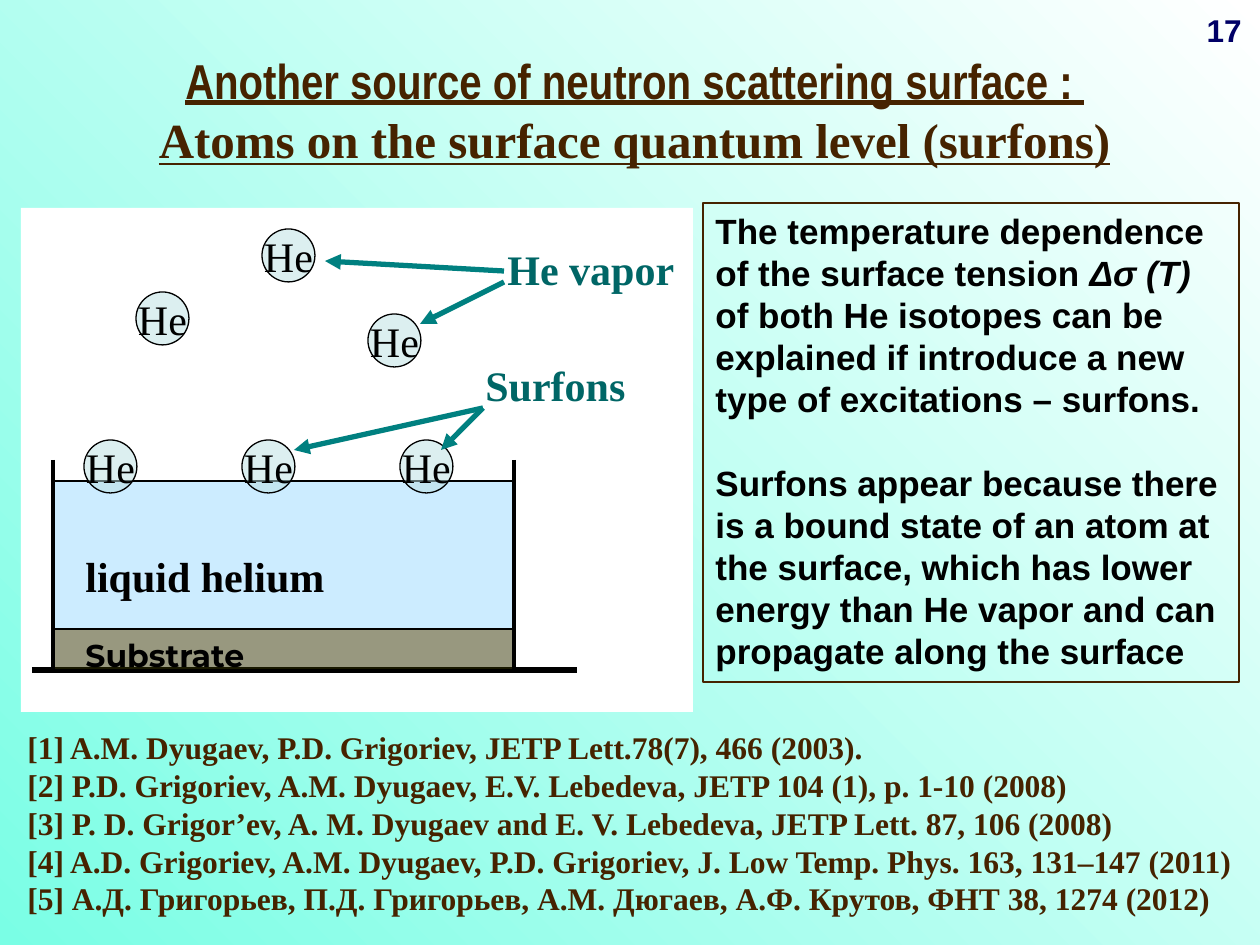
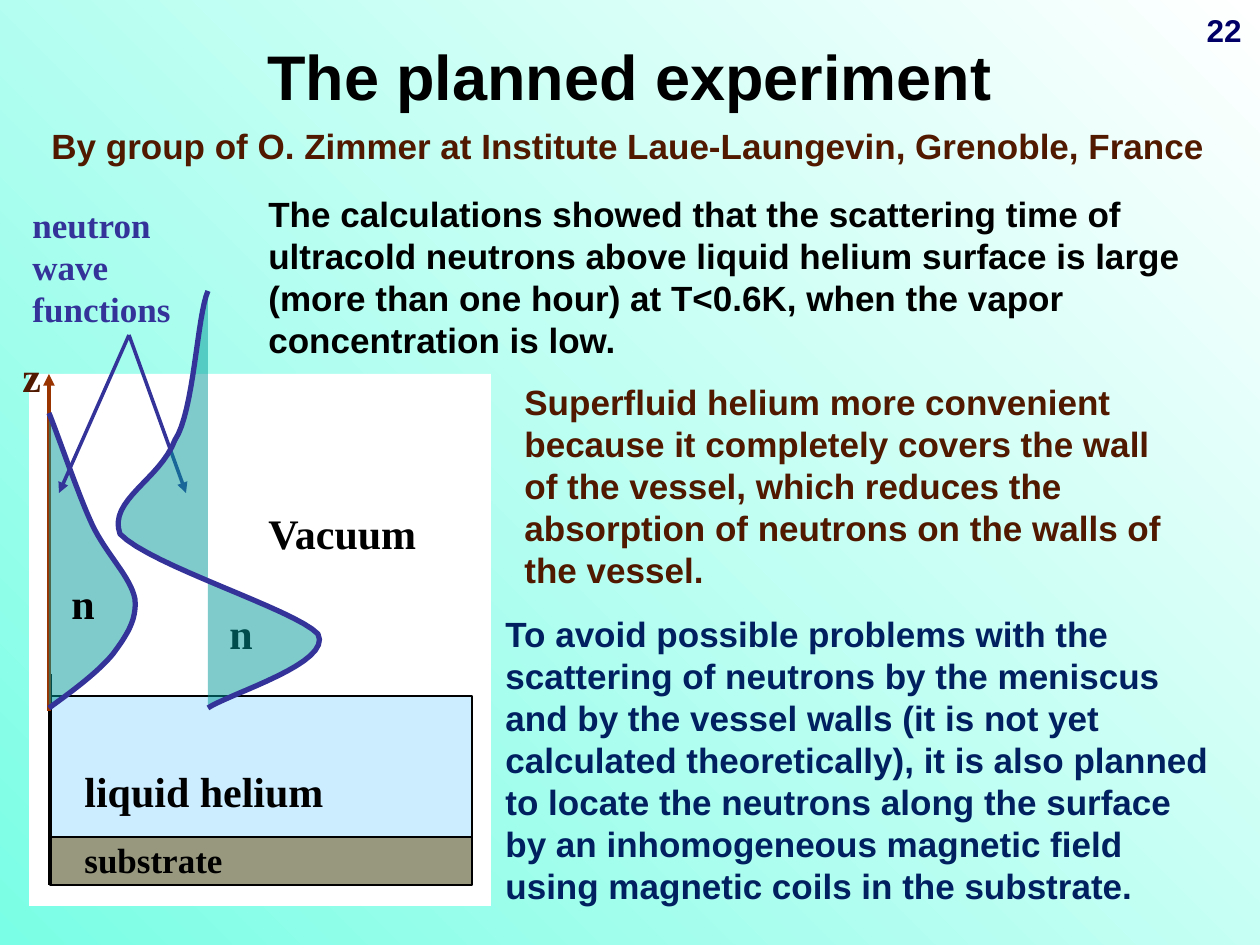
from dataclasses import dataclass, replace

from lxml.etree import SubElement
from pptx import Presentation
from pptx.dml.color import RGBColor
from pptx.enum.shapes import MSO_CONNECTOR as Connector, MSO_SHAPE as Preset
from pptx.enum.text import MSO_ANCHOR as Anchor, MSO_AUTO_SIZE as AutoSize, PP_ALIGN as Align
from pptx.oxml.ns import qn
from pptx.util import Pt

EMU_PER_PX = 914400 / 126
TITLE_ONLY = 5
HALF = 50


@dataclass(frozen=True)
class Style:
    size: int
    font: str
    color: str
    bold: bool = True
    italic: bool = False
    underline: bool = False


class Theme:
    # Colours
    mint, white, black = "7AFEE5", "FFFFFF", "000000"
    brown, rust, axis = "462300", "501900", "993300"
    teal, label_teal, wave_fill = "008080", "006666", "009999"
    navy, dark_blue, violet = "000066", "002060", "333399"
    liquid, substrate, atom = "CCECFF", "333300", "BBE0E3"
    # Text styles
    sans, serif = "Arial", "Times New Roman"
    body = Style(20, sans, black)
    title = Style(36, sans, black)
    number = Style(18, sans, navy)
    label = Style(24, serif, black)
    reference = Style(18, serif, brown)
    surfon_title = Style(28, serif, brown, underline=True)
    # Line widths in points
    thin, wall, bold = 0.75, 2.5, 3


def px(*lengths):
    return [round(length * EMU_PER_PX) for length in lengths]


def rgb(color):
    return RGBColor.from_string(color)


# Text

def add_span(para, text, style):
    span = para.add_run()
    span.text = text
    font = span.font
    font.size, font.name = Pt(style.size), style.font
    font.bold, font.italic, font.underline = style.bold, style.italic, style.underline
    font.color.rgb = rgb(style.color)


def write(frame, paragraphs, align=Align.LEFT, gap=0):
    """Each paragraph is a list of (text, style) spans."""
    for index, spans in enumerate(paragraphs):
        para = frame.paragraphs[0] if index == 0 else frame.add_paragraph()
        para.alignment = align
        if index and gap:
            para.space_before = Pt(gap)
        for text, style in spans:
            add_span(para, text, style)


def add_text(page, place, lines, style, align=Align.LEFT, wrap=True, grow=True):
    frame = page.shapes.add_textbox(*px(*place)).text_frame
    frame.word_wrap = wrap
    frame.auto_size = AutoSize.SHAPE_TO_FIT_TEXT if grow else AutoSize.NONE
    write(frame, [[(line, style)] for line in lines], align)


def set_title(page, place, lines):
    title = page.shapes.title
    title.left, title.top, title.width, title.height = px(*place)
    frame = title.text_frame
    frame.word_wrap, frame.auto_size = True, AutoSize.NONE
    frame.vertical_anchor = Anchor.MIDDLE
    para = frame.paragraphs[0]
    para.alignment = Align.CENTER
    for index, (text, style) in enumerate(lines):
        if index:
            para.add_line_break()
        add_span(para, text, style)


# Shapes and lines

def paint(shape, fill=None, line=None, width=Theme.thin, alpha=None):
    shape.shadow.inherit = False
    if fill:
        shape.fill.solid()
        shape.fill.fore_color.rgb = rgb(fill)
    else:
        shape.fill.background()
    if alpha:
        color = shape.fill._xPr.find(qn("a:solidFill"))[0]
        SubElement(color, qn("a:alpha")).set("val", str(alpha * 1000))
    if line:
        shape.line.color.rgb = rgb(line)
        shape.line.width = Pt(width)
    else:
        shape.line.fill.background()
    return shape


def add_box(page, place, preset=Preset.RECTANGLE, **look):
    return paint(page.shapes.add_shape(preset, *px(*place)), **look)


def add_line(page, start, end, color, width, arrow=False):
    line = page.shapes.add_connector(Connector.STRAIGHT, *px(*start, *end))
    line.line.color.rgb = rgb(color)
    line.line.width = Pt(width)
    if arrow:
        SubElement(line.line._get_or_add_ln(), qn("a:tailEnd")).set("type", "triangle")
    SubElement(line._element.spPr, qn("a:effectLst"))


def add_arrows(page, start, ends, color, width):
    for end in ends:
        add_line(page, start, end, color, width, arrow=True)


def bezier(p0, p1, p2, p3, steps=16):
    for step in range(1, steps + 1):
        t = step / steps
        u = 1 - t
        weights = (u ** 3, 3 * u * u * t, 3 * u * t * t, t ** 3)
        yield tuple(sum(w * point[axis] for w, point in zip(weights, (p0, p1, p2, p3)))
                    for axis in (0, 1))


def add_wave(page, start, curves):
    """Wave function: cubic curves, filled towards its straight axis."""
    points, last = [], start
    for curve in curves:
        points += bezier(last, *curve)
        last = curve[-1]
    builder = page.shapes.build_freeform(*px(*start))
    builder.add_line_segments([px(*point) for point in points], close=False)
    paint(builder.convert_to_shape(), Theme.wave_fill, Theme.violet, Theme.bold, HALF)


# Helium vessel parts

def add_layers(page, left, width, surface, boundary, bottom):
    add_box(page, (left, surface, width, boundary - surface),
            fill=Theme.liquid, line=Theme.black)
    add_box(page, (left, boundary, width, bottom - boundary),
            fill=Theme.substrate, line=Theme.black, alpha=HALF)


def add_wall(page, x, top, bottom):
    add_line(page, (x, top), (x, bottom), Theme.black, Theme.wall)


def add_atom(page, left, top):
    atom = add_box(page, (left, top, 53, 53), Preset.OVAL,
                   fill=Theme.atom, line=Theme.black, alpha=HALF)
    frame = atom.text_frame
    frame.word_wrap, frame.vertical_anchor = False, Anchor.MIDDLE
    write(frame, [[("He", replace(Theme.label, bold=False))]], Align.CENTER)


# Pages

def new_page(deck, number):
    page = deck.slides.add_slide(deck.slide_layouts[TITLE_ONLY])
    add_text(page, (1176, 5, 78, 50), [number], Theme.number, Align.RIGHT, grow=False)
    return page


def build_surfons(deck):
    page = new_page(deck, "17")
    set_title(page, (29, 49, 1211, 121), [
        ("Another source of neutron scattering surface : ",
         replace(Theme.surfon_title, font="Arial Narrow")),
        ("Atoms on the surface quantum level (surfons)", Theme.surfon_title)])

    # Vessel with liquid helium
    add_box(page, (21, 208, 672, 504), fill=Theme.white)
    add_line(page, (32, 670), (577, 670), Theme.black, Theme.bold)
    add_layers(page, 53, 462, 481, 629, 670)
    for x in (53, 514):
        add_wall(page, x, 460, 670)
    add_text(page, (73, 544, 357, 63), ["liquid helium"], Theme.label)
    add_text(page, (73, 630, 357, 50), ["Substrate"],
             replace(Theme.label, size=18, font="Montserrat"))

    # Atoms on the surface and in the vapor
    surfons = [(84 + 158 * column, 440) for column in range(3)]
    vapor = [(136, 292), (262, 229), (368, 314)]
    for left, top in surfons + vapor:
        add_atom(page, left, top)
    teal_label = replace(Theme.label, color=Theme.label_teal)
    add_text(page, (495, 237, 194, 64), ["He vapor"], teal_label, wrap=False)
    add_text(page, (473, 353, 168, 64), ["Surfons"], teal_label, wrap=False)
    add_arrows(page, (504, 271), [(325, 261)], Theme.teal, Theme.bold)
    add_arrows(page, (504, 282), [(420, 324)], Theme.teal, Theme.bold)
    add_arrows(page, (483, 408), [(441, 450), (294, 450)], Theme.teal, Theme.bold)

    # Explanation
    frame = add_box(page, (703, 203, 536, 479), line=Theme.brown).text_frame
    frame.word_wrap, frame.auto_size = True, AutoSize.SHAPE_TO_FIT_TEXT
    frame.vertical_anchor = Anchor.TOP
    write(frame, [
        [("The temperature dependence of the surface tension ", Theme.body),
         ("Δσ (T) ", replace(Theme.body, italic=True)),
         ("of both He isotopes can be explained if introduce a new type of "
          "excitations – surfons.", Theme.body)],
        [("Surfons appear because there is a bound state of an atom at the surface, "
          "which has lower energy than He vapor and can propagate along the surface",
          Theme.body)]], gap=24)

    # References
    add_text(page, (15, 722, 1235, 204), [
        "[1] A.M. Dyugaev, P.D. Grigoriev, JETP Lett.78(7), 466 (2003).",
        "[2] P.D. Grigoriev, A.M. Dyugaev, E.V. Lebedeva, JETP 104 (1), p. 1-10 (2008)",
        "[3] P. D. Grigor’ev, A. M. Dyugaev and E. V. Lebedeva, JETP Lett. 87, 106 (2008)",
        "[4] A.D. Grigoriev, A.M. Dyugaev, P.D. Grigoriev, J. Low Temp. Phys. 163, "
        "131–147 (2011)",
        "[5] А.Д. Григорьев, П.Д. Григорьев, А.М. Дюгаев, А.Ф. Крутов, ФНТ 38, 1274 (2012)",
    ], Theme.reference)


def build_experiment(deck):
    page = new_page(deck, "22")
    set_title(page, (98, 20, 1063, 110), [("The planned experiment", Theme.title)])
    rust_body = replace(Theme.body, color=Theme.rust)
    add_text(page, (39, 118, 1191, 55),
             ["By group of O. Zimmer at Institute Laue-Laungevin, Grenoble, France"],
             rust_body)

    # Vessel with liquid helium
    add_box(page, (29, 374, 462, 532), fill=Theme.white)
    add_layers(page, 50, 422, 696, 837, 885)
    add_wall(page, 50, 674, 885)
    add_text(page, (72, 759, 357, 63), ["liquid helium"], Theme.label)
    add_text(page, (72, 832, 357, 54), ["substrate"], replace(Theme.label, size=20))
    add_text(page, (256, 501, 185, 63), ["Vacuum"], Theme.label, wrap=False)

    # Height axis
    add_arrows(page, (49, 711), [(49, 374)], Theme.axis, 2.25)
    add_text(page, (10, 344, 44, 63), ["z"], replace(Theme.label, color=Theme.rust),
             wrap=False)

    # Neutron wave functions
    add_wave(page, (49, 708), [
        ((74, 690), (98, 672), (113, 654)),
        ((127, 635), (137, 620), (135, 599)),
        ((131, 577), (106, 554), (92, 524)),
        ((78, 494), (57, 432), (49, 413))])
    add_text(page, (217, 601, 49, 64), ["n"], Theme.label, wrap=False)
    add_text(page, (20, 197, 168, 140), ["neutron wave functions"],
             replace(Theme.label, size=20, color=Theme.violet))
    add_arrows(page, (129, 335), [(59, 493), (186, 493)], Theme.violet, 2)
    add_wave(page, (208, 708), [
        ((231, 693), (333, 663), (318, 634)),
        ((294, 609), (151, 566), (120, 534)),
        ((108, 500), (160, 480), (175, 440)),
        ((194, 412), (197, 316), (208, 291))])
    add_text(page, (59, 571, 49, 64), ["n"], Theme.label)

    # Arguments
    add_text(page, (493, 606, 738, 310), [
        "To avoid possible problems with the scattering of neutrons by the meniscus and "
        "by the vessel walls (it is not yet calculated theoretically), it is also planned "
        "to locate the neutrons along the surface by an inhomogeneous magnetic field "
        "using magnetic coils in the substrate."],
        replace(Theme.body, color=Theme.dark_blue))
    add_text(page, (512, 374, 689, 224), [
        "Superfluid helium more convenient because it completely covers the wall of the "
        "vessel, which reduces the absorption of neutrons on the walls of the vessel."],
        rust_body)
    add_text(page, (256, 186, 984, 183), [
        "The calculations showed that the scattering time of ultracold neutrons above "
        "liquid helium surface is large (more than one hour) at T<0.6K, when the vapor "
        "concentration is low."], Theme.body)


def set_background(deck):
    fill = deck.slide_master.background.fill
    fill.gradient()
    fill.gradient_angle = 45
    for stop, color, position in zip(fill.gradient_stops, (Theme.mint, Theme.white), (0, 1)):
        stop.color.rgb = rgb(color)
        stop.position = position


def main():
    deck = Presentation()
    deck.slide_width, deck.slide_height = px(1260, 945)
    set_background(deck)
    build_surfons(deck)
    build_experiment(deck)
    deck.save("out.pptx")


if __name__ == "__main__":
    main()
